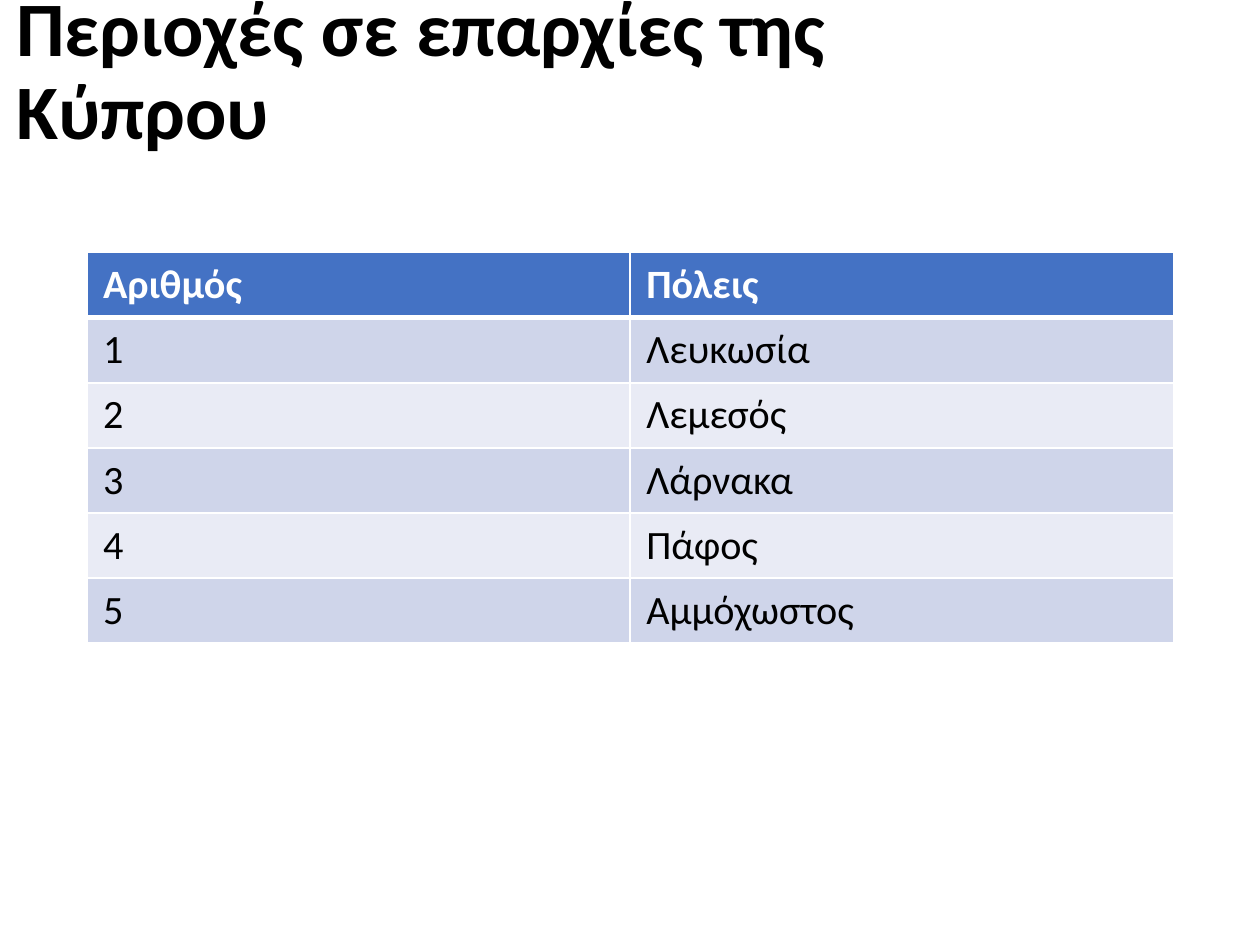
from dataclasses import dataclass

from lxml import etree
from pptx import Presentation
from pptx.dml.color import RGBColor
from pptx.enum.text import MSO_ANCHOR, MSO_AUTO_SIZE, PP_ALIGN
from pptx.oxml.ns import qn
from pptx.table import _Cell
from pptx.text.text import TextFrame
from pptx.util import Inches, Pt

LEFT = PP_ALIGN.LEFT
TOP = MSO_ANCHOR.TOP
MIDDLE = MSO_ANCHOR.MIDDLE
NO_AUTOFIT = MSO_AUTO_SIZE.NONE

SLIDE_WIDTH = Inches(7.84)
SLIDE_HEIGHT = Inches(5.88)
FONT = "Calibri"
BLACK = "000000"
WHITE = "FFFFFF"
HEADER_BLUE = "4472C4"
BANDS = ("CFD5EA", "E9EBF5")
THIN, THICK = 1, 3
TITLE_ONLY_LAYOUT = 5


@dataclass(frozen=True)
class Area:
    left: float
    top: float
    width: float
    height: float

    def lengths(self) -> tuple[int, int, int, int]:
        return (
            round(self.left * SLIDE_WIDTH),
            round(self.top * SLIDE_HEIGHT),
            round(self.width * SLIDE_WIDTH),
            round(self.height * SLIDE_HEIGHT),
        )


@dataclass(frozen=True)
class RowStyle:
    fill: str
    color: str
    bold: bool
    top_border: float
    bottom_border: float


TITLE_AREA = Area(0, -0.02, 0.8625, 0.194)
TABLE_AREA = Area(0.069, 0.267, 0.8625, 0.4135)
HEADINGS = ("Αριθμός", "Πόλεις")
CITIES = ("Λευκωσία", "Λεμεσός", "Λάρνακα", "Πάφος", "Αμμόχωστος")


def rgb(value: str) -> RGBColor:
    return RGBColor.from_string(value)


def write_text(frame: TextFrame, text: str, *, size: float, color: str,
               bold: bool, spacing: float = 1.0) -> None:
    para = frame.paragraphs[0]
    para.alignment = LEFT
    para.line_spacing = spacing
    span = para.add_run()
    span.text = text
    span.font.name = FONT
    span.font.size = Pt(size)
    span.font.bold = bold
    span.font.color.rgb = rgb(color)


def set_borders(cell: _Cell, style: RowStyle) -> None:
    properties = cell._tc.get_or_add_tcPr()
    widths = {"a:lnL": THIN, "a:lnR": THIN,
              "a:lnT": style.top_border, "a:lnB": style.bottom_border}
    for position, (tag, width) in enumerate(widths.items()):
        line = etree.Element(qn(tag), w=str(Pt(width)))
        fill = etree.SubElement(line, qn("a:solidFill"))
        etree.SubElement(fill, qn("a:srgbClr"), val=WHITE)
        properties.insert(position, line)


def row_style(row: int) -> RowStyle:
    if row == 0:
        return RowStyle(HEADER_BLUE, WHITE, True, THIN, THICK)
    band = BANDS[(row - 1) % len(BANDS)]
    return RowStyle(band, BLACK, False, THICK if row == 1 else THIN, THIN)


def format_cell(cell: _Cell, text: str, style: RowStyle) -> None:
    cell.vertical_anchor = TOP
    cell.fill.solid()
    cell.fill.fore_color.rgb = rgb(style.fill)
    set_borders(cell, style)
    write_text(cell.text_frame, text, size=18, color=style.color, bold=style.bold)


def main() -> None:
    deck = Presentation()
    deck.slide_width, deck.slide_height = SLIDE_WIDTH, SLIDE_HEIGHT
    page = deck.slides.add_slide(deck.slide_layouts[TITLE_ONLY_LAYOUT])

    title = page.shapes.title
    title.left, title.top, title.width, title.height = TITLE_AREA.lengths()
    title.text_frame.word_wrap = True
    title.text_frame.auto_size = NO_AUTOFIT
    title.text_frame.vertical_anchor = MIDDLE
    write_text(title.text_frame, "Περιοχές σε επαρχίες της Κύπρου",
               size=34.5, color=BLACK, bold=True, spacing=0.9)

    records = [HEADINGS]
    records += [(str(number), city) for number, city in enumerate(CITIES, 1)]
    table = page.shapes.add_table(
        len(records), len(HEADINGS), *TABLE_AREA.lengths()).table
    for row, record in enumerate(records):
        for column, text in enumerate(record):
            format_cell(table.cell(row, column), text, row_style(row))

    deck.save("out.pptx")


if __name__ == "__main__":
    main()
